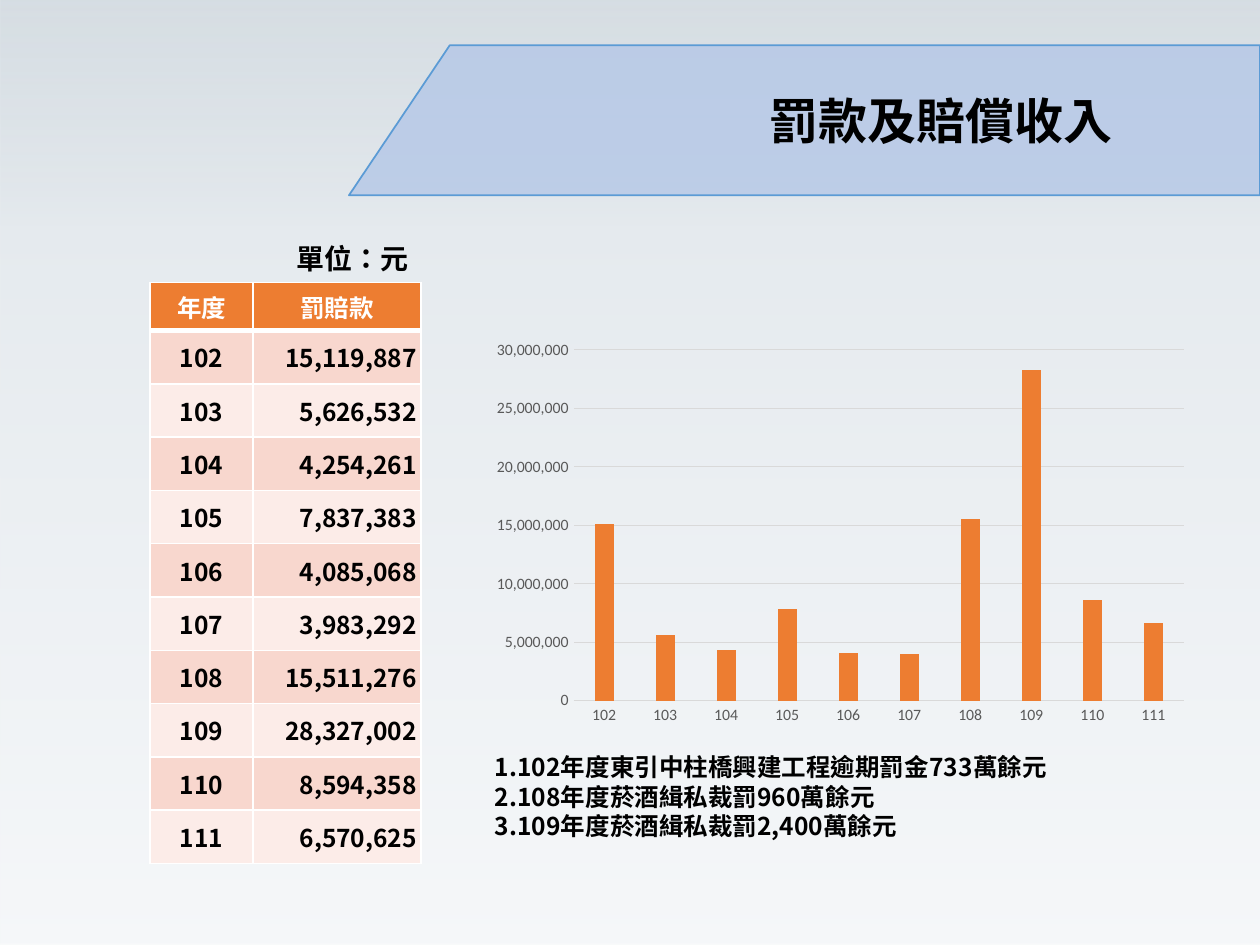
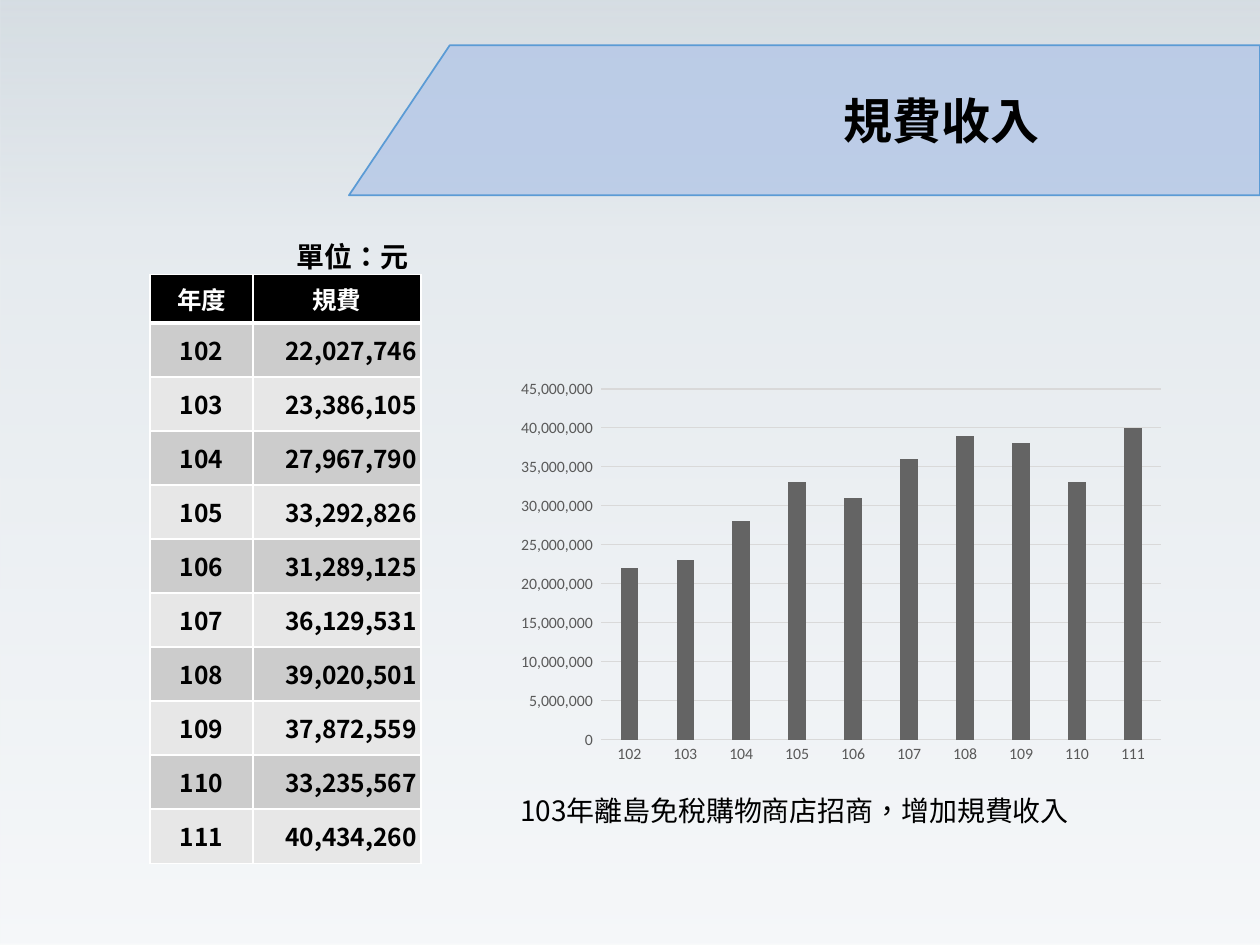
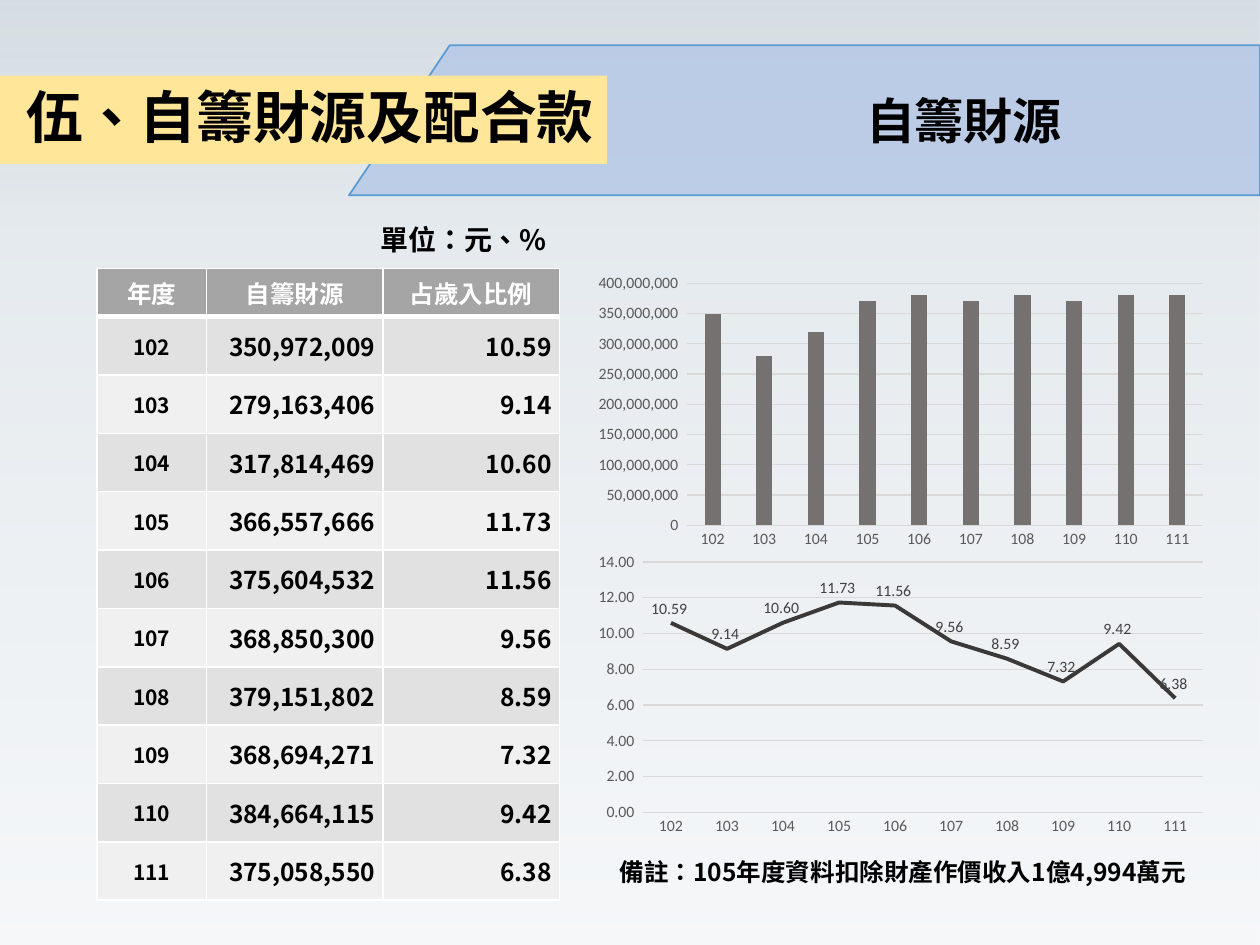
from dataclasses import dataclass

from pptx import Presentation
from pptx.chart.data import CategoryChartData
from pptx.dml.color import RGBColor
from pptx.enum.chart import XL_CHART_TYPE, XL_LABEL_POSITION, XL_TICK_MARK
from pptx.enum.shapes import MSO_SHAPE
from pptx.enum.text import MSO_ANCHOR, MSO_AUTO_SIZE, PP_ALIGN
from pptx.oxml import parse_xml
from pptx.oxml.ns import nsdecls, qn
from pptx.util import Inches, Pt

LEFT, CENTER, RIGHT = PP_ALIGN.LEFT, PP_ALIGN.CENTER, PP_ALIGN.RIGHT
TOP, MIDDLE = MSO_ANCHOR.TOP, MSO_ANCHOR.MIDDLE
COLUMN, LINE = XL_CHART_TYPE.COLUMN_CLUSTERED, XL_CHART_TYPE.LINE
ABOVE, NO_TICK, NO_FIT = XL_LABEL_POSITION.ABOVE, XL_TICK_MARK.NONE, MSO_AUTO_SIZE.NONE
RECT = MSO_SHAPE.RECTANGLE
PLAIN_STYLE = "{2D5ABB26-0587-4C30-8999-92F81FD0307C}"  # no style, no grid


@dataclass(frozen=True)
class Theme:
    font: str = "Noto Sans CJK SC"
    chart_font: str = "Calibri"
    ink: str = "000000"
    paper: str = "FFFFFF"
    band: str = "B4C7E7"
    edge: str = "5B9BD5"
    section: str = "FFE699"
    axis: str = "595959"
    grid: str = "D9D9D9"
    label: str = "404040"
    sky: tuple = ((0, "CDD6DD", 82), (25, "E5EAEE", 100), (100, "F5F7F9", 100))
    head_size: float = 32.4
    title_size: float = 28
    unit_size: float = 16
    text_size: float = 14
    small_size: float = 12
    tick_size: float = 9


T = Theme()
YEARS = [str(year) for year in range(102, 112)]
BAND = [(3.57, 0.36), (10, 0.36), (10, 1.55), (2.77, 1.55)]

# A chart is: kind, place, colour, number format, decimals kept.
SLIDES = [
    dict(
        title="罰款及賠償收入", mid=7.47, left=0,
        unit="單位：元", unit_at=(1.75, 1.83, 1.59, 0.41),
        table_at=(1.19, 2.24, 2.16, 4.54), widths=(0.82, 1.33), head=0.31, pad=0.03,
        year_size=T.text_size, fills=("ED7D31", "F8D7CE", "FCECE8"),
        columns=[("罰賠款", "{:,}", [15119887, 5626532, 4254261, 7837383, 4085068,
                                  3983292, 15511276, 28327002, 8594358, 6570625])],
        charts=[(COLUMN, (3.83, 2.64, 5.68, 3.17), "ED7D31", "#,##0", -5)],
        notes=["1.102年度東引中柱橋興建工程逾期罰金733萬餘元",
               "2.108年度菸酒緝私裁罰960萬餘元",
               "3.109年度菸酒緝私裁罰2,400萬餘元"],
        notes_at=(3.83, 5.92, 5.58, 0.81), notes_font=(T.text_size, True),
    ),
    dict(
        title="規費收入", mid=7.47, left=0,
        unit="單位：元", unit_at=(1.75, 1.82, 1.59, 0.37),
        table_at=(1.19, 2.18, 2.16, 4.63), widths=(0.82, 1.33), head=0.34, pad=0.03,
        year_size=T.text_size, fills=("000000", "CCCCCC", "E7E7E7"),
        columns=[("規費", "{:,}", [22027746, 23386105, 27967790, 33292826, 31289125,
                                 36129531, 39020501, 37872559, 33235567, 40434260])],
        charts=[(COLUMN, (4.03, 2.95, 5.29, 3.17), "646464",
                 r"#,##0_);[Red]\(#,##0\)", -6)],
        notes=["103年離島免稅購物商店招商，增加規費收入"],
        notes_at=(4.03, 6.25, 5.09, 0.37), notes_font=(T.unit_size, False),
    ),
    dict(
        title="自籌財源", mid=7.65, left=-0.09, section="伍、自籌財源及配合款",
        unit="單位：元、%", unit_at=(2.85, 1.68, 1.59, 0.41),
        table_at=(0.77, 2.13, 3.67, 4.99), widths=(0.87, 1.4, 1.4), head=0.36, pad=0.06,
        year_size=T.small_size, fills=("A5A5A5", "E1E1E1", "F0F0F0"),
        columns=[("自籌財源", "{:,}", [350972009, 279163406, 317814469, 366557666, 375604532,
                                   368850300, 379151802, 368694271, 384664115, 375058550]),
                 ("占歲入比例", "{:.2f}", [10.59, 9.14, 10.60, 11.73, 11.56,
                                      9.56, 8.59, 7.32, 9.42, 6.38])],
        charts=[(COLUMN, (4.65, 2.13, 5, 2.27), "767171", "#,##0_ ", -7),
                (LINE, (4.65, 4.34, 5, 2.34), "3B3838", "0.00_ ", 2)],
        notes=["備註：105年度資料扣除財產作價收入1億4,994萬元"],
        notes_at=(4.82, 6.75, 5.47, 0.34), notes_font=(T.text_size, True),
    ),
]


def rgb(code):
    return RGBColor.from_string(code)


def inches(box):
    return [Inches(n) for n in box]


def paint(shape, code):
    shape.fill.solid()
    shape.fill.fore_color.rgb = rgb(code)


def write(frame, lines, size, color=T.ink, bold=True, align=LEFT):
    frame.text = "\n".join(lines)
    for para in frame.paragraphs:
        para.alignment = align
        for run in para.runs:
            font = run.font
            font.size, font.bold, font.name = Pt(size), bold, T.font
            font.color.rgb = rgb(color)
            props = font._element
            props.set("lang", "zh-TW")
            props.append(props.makeelement(qn("a:ea"), {"typeface": T.font}))


def add_sky(slide, left):
    sky = slide.shapes.add_shape(RECT, *inches((left, -0.06, 10 - left, 7.56)))
    sky.shadow.inherit = False
    sky.line.fill.background()
    stops = "".join(
        f'<a:gs pos="{pos * 1000}"><a:srgbClr val="{code}">'
        f'<a:alpha val="{alpha * 1000}"/></a:srgbClr></a:gs>'
        for pos, code, alpha in T.sky)
    props = sky._element.spPr
    props.find(qn("a:prstGeom")).addnext(parse_xml(
        f'<a:gradFill {nsdecls("a")}><a:gsLst>{stops}</a:gsLst>'
        '<a:lin ang="5400000" scaled="0"/></a:gradFill>'))


def add_band(slide):
    start, *rest = [inches(point) for point in BAND]
    path = slide.shapes.build_freeform(*start)
    path.add_line_segments(rest, close=True)
    band = path.convert_to_shape()
    band.shadow.inherit = False
    paint(band, T.band)
    tint = band._element.spPr.find(".//" + qn("a:srgbClr"))
    tint.append(tint.makeelement(qn("a:alpha"), {"val": "80000"}))
    band.line.color.rgb = rgb(T.edge)
    band.line.width = Pt(1)


def place(box, at):
    box.left, box.top, box.width, box.height = inches(at)
    frame = box.text_frame
    frame.auto_size, frame.vertical_anchor = NO_FIT, MIDDLE
    return frame


def add_titles(slide, data):
    """Put the section, or else the topic, in the title placeholder."""
    head = slide.shapes.title
    slide.shapes._spTree.append(head._element)
    topic = head
    if "section" in data:
        topic = slide.shapes.add_textbox(0, 0, 0, 0)
        paint(head, T.section)
        frame = place(head, (-0.09, 0.6, 4.91, 0.7))
        frame.margin_left, frame.word_wrap = Inches(0.3), False
        write(frame, [data["section"]], T.head_size)
        frame.paragraphs[0].line_spacing = 0.9
    frame = place(topic, (data["mid"] - 2.3, 0.36, 4.6, 1.19))
    frame.word_wrap = True
    write(frame, [data["title"]], T.title_size, align=CENTER)


def add_grid(slide, at, rows, cols):
    """Add a table without any style."""
    grid = slide.shapes.add_table(rows, cols, *inches(at)).table
    grid.first_row = grid.horz_banding = False
    grid._tbl.tblPr.find(qn("a:tableStyleId")).text = PLAIN_STYLE
    return grid


def add_edges(cell, base):
    """Draw white cell borders; base is the width of the lower one."""
    props = cell._tc.get_or_add_tcPr()
    for spot, (side, width) in enumerate(zip("LRTB", (1, 1, 1, base))):
        props.insert(spot, parse_xml(
            f'<a:ln{side} {nsdecls("a")} w="{Pt(width)}"><a:solidFill>'
            f'<a:srgbClr val="{T.paper}"/></a:solidFill></a:ln{side}>'))


def add_figures(slide, data):
    columns = data["columns"]
    rows = [["年度"] + [name for name, _, _ in columns]]
    for i, year in enumerate(YEARS):
        rows.append([year] + [form.format(vals[i]) for _, form, vals in columns])
    grid = add_grid(slide, data["table_at"], len(rows), len(rows[0]))
    for col, width in zip(grid.columns, data["widths"]):
        col.width = Inches(width)
    body = (data["table_at"][3] - data["head"]) / len(YEARS)
    head_fill, odd, even = data["fills"]
    for r, row in enumerate(rows):
        head = r == 0
        grid.rows[r].height = Inches(data["head"] if head else body)
        for c, text in enumerate(row):
            cell = grid.cell(r, c)
            paint(cell, head_fill if head else odd if r % 2 else even)
            add_edges(cell, 3 if head else 1)
            cell.vertical_anchor = TOP if head else MIDDLE
            figure = c > 0 and not head
            if figure:
                cell.margin_left = cell.margin_top = cell.margin_bottom = 0
                cell.margin_right = Inches(data["pad"])
            write(cell.text_frame, [text],
                  T.text_size if head or figure else data["year_size"],
                  T.paper if head else T.ink, align=RIGHT if figure else CENTER)


def add_unit(slide, data):
    cell = add_grid(slide, data["unit_at"], 1, 1).cell(0, 0)
    write(cell.text_frame, [data["unit"]], T.unit_size, align=RIGHT)


def set_font(font, color):
    font.name, font.size = T.chart_font, Pt(T.tick_size)
    font.color.rgb = rgb(color)


def add_plot(slide, spot, column):
    kind, at, color, code, digits = spot
    name, _, vals = column
    source = CategoryChartData(number_format=code)
    source.categories = YEARS
    source.add_series(name, [round(val, digits) for val in vals])
    chart = slide.shapes.add_chart(kind, *inches(at), source).chart
    chart.has_legend = chart.has_title = False
    set_font(chart.font, T.ink)
    for axis in (chart.category_axis, chart.value_axis):
        axis.major_tick_mark = axis.minor_tick_mark = NO_TICK
        set_font(axis.tick_labels.font, T.axis)
    ticks = chart.value_axis.tick_labels
    ticks.number_format, ticks.number_format_is_linked = code, False
    chart.value_axis.format.line.fill.background()
    for line in (chart.category_axis.format.line,
                 chart.value_axis.major_gridlines.format.line):
        line.color.rgb, line.width = rgb(T.grid), Pt(0.75)
    plot = chart.plots[0]
    plot.vary_by_categories = False
    series = plot.series[0]
    if kind == COLUMN:
        plot.gap_width, plot.overlap = 219, -27
        paint(series.format, color)
        return
    series.smooth = False
    series.format.line.color.rgb = rgb(color)
    series.format.line.width = Pt(2.25)
    labels = series.data_labels
    labels.show_value, labels.position = True, ABOVE
    labels.number_format, labels.number_format_is_linked = code, False
    set_font(labels.font, T.label)


def add_notes(slide, data):
    frame = slide.shapes.add_textbox(*inches(data["notes_at"])).text_frame
    frame.word_wrap = True
    size, bold = data["notes_font"]
    write(frame, data["notes"], size, bold=bold)


def main():
    deck = Presentation()
    deck.slide_width, deck.slide_height = inches((10, 7.5))
    for data in SLIDES:
        slide = deck.slides.add_slide(deck.slide_layouts[5])
        add_sky(slide, data["left"])
        add_band(slide)
        add_titles(slide, data)
        add_figures(slide, data)
        add_unit(slide, data)
        for spot, column in zip(data["charts"], data["columns"]):
            add_plot(slide, spot, column)
        add_notes(slide, data)
    deck.save("out.pptx")


if __name__ == "__main__":
    main()
